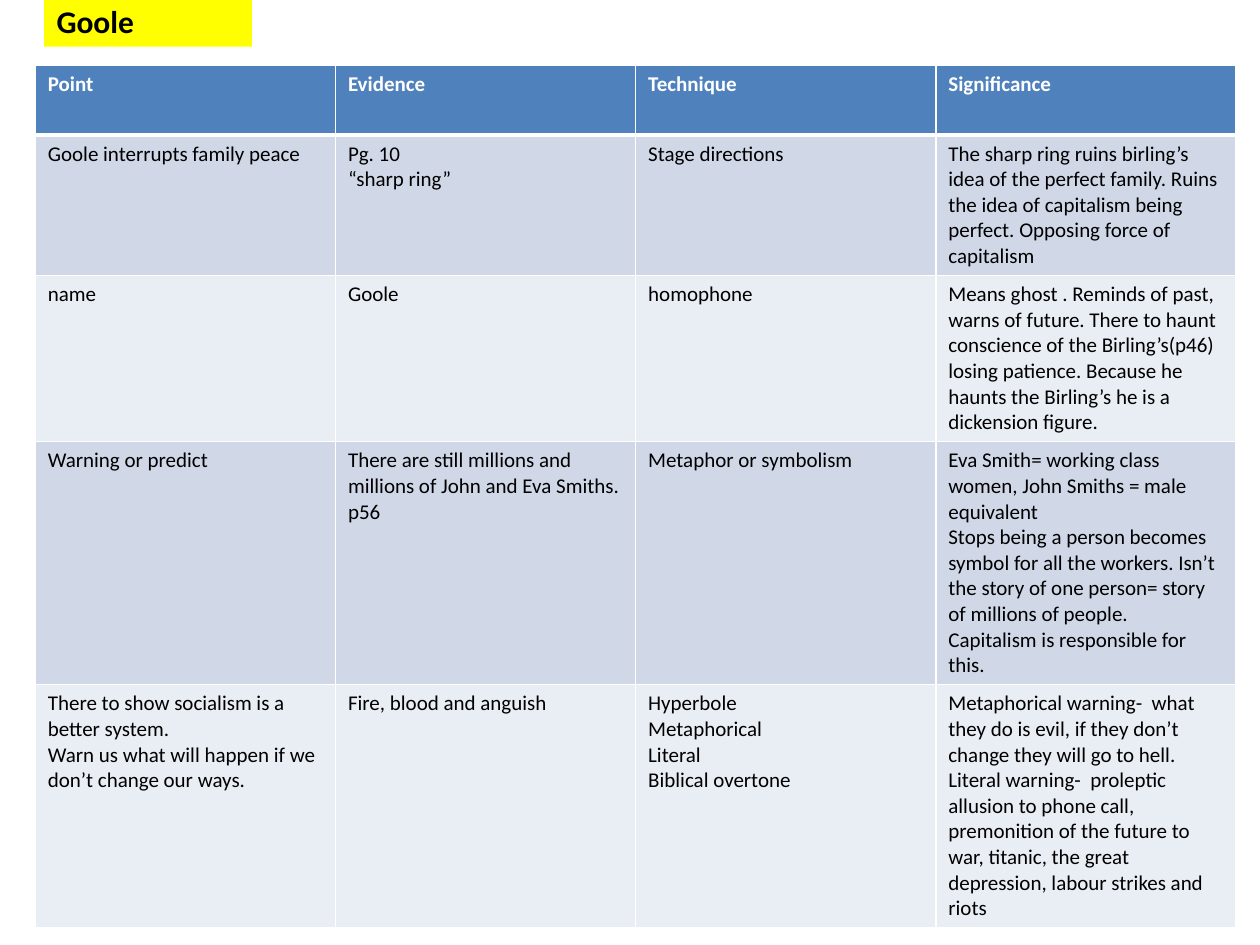
from lxml.etree import SubElement
from pptx import Presentation
from pptx.dml.color import RGBColor
from pptx.enum.text import MSO_AUTO_SIZE
from pptx.oxml.ns import qn
from pptx.util import Inches, Pt

TITLE = "Goole"
HEADINGS = ["Point", "Evidence", "Technique", "Significance"]
# Each cell is a list of paragraphs.
ROWS = [
    [
        ["Goole interrupts family peace"],
        ["Pg. 10", "“sharp ring”"],
        ["Stage directions"],
        ["The sharp ring ruins birling’s idea of the perfect family. Ruins the idea "
         "of capitalism being perfect. Opposing force of capitalism"],
    ],
    [
        ["name"],
        ["Goole"],
        ["homophone"],
        ["Means ghost . Reminds of past, warns of future. There to haunt conscience of "
         "the Birling’s(p46) losing patience. Because he haunts the Birling’s he is a "
         "dickension figure."],
    ],
    [
        ["Warning or predict"],
        ["There are still millions and millions of John and Eva Smiths. p56"],
        ["Metaphor or symbolism"],
        ["Eva Smith= working class women, John Smiths = male equivalent",
         "Stops being a person becomes symbol for all the workers. Isn’t the story of "
         "one person= story of millions of people.",
         "Capitalism is responsible for this."],
    ],
    [
        ["There to show socialism is a better system.",
         "Warn us what will happen if we don’t change our ways."],
        ["Fire, blood and anguish"],
        ["Hyperbole", "Metaphorical", "Literal", "Biblical overtone"],
        ["Metaphorical warning-  what they do is evil, if they don’t change they will "
         "go to hell.",
         "Literal warning-  proleptic allusion to phone call, premonition of the future "
         "to war, titanic, the great depression, labour strikes and riots"],
    ],
]

COLOURS = {
    "title": "FFFF00",
    "header": "4F81BD",
    "odd": "D0D8E8",
    "even": "E9EDF4",
    "text": "000000",
    "white": "FFFFFF",
}
FONT = "Calibri"
TABLE_LEFT, TABLE_TOP, TABLE_WIDTH = 0.28, 0.52, 9.53
HEADER_HEIGHT, ROW_HEIGHT = 0.55, 0.94


def colour(name):
    return RGBColor.from_string(COLOURS[name])


def write(frame, lines, size, text_colour, bold):
    frame.text = "\n".join(lines)
    for para in frame.paragraphs:
        para.font.name = FONT
        para.font.size = Pt(size)
        para.font.bold = bold
        para.font.color.rgb = colour(text_colour)


def add_borders(cell, bottom_width):
    """Draw white cell borders, which must come before the fill in the XML."""
    properties = cell._tc.get_or_add_tcPr()
    widths = {"lnL": 1, "lnR": 1, "lnT": 1, "lnB": bottom_width}
    for side, width in widths.items():
        line = SubElement(properties, qn(f"a:{side}"), w=str(Pt(width)))
        fill = SubElement(line, qn("a:solidFill"))
        SubElement(fill, qn("a:srgbClr"), val=COLOURS["white"])


def add_title(page):
    box = page.shapes.add_textbox(Inches(0.35), Inches(-0.03), Inches(1.65), Inches(0.4))
    box.fill.solid()
    box.fill.fore_color.rgb = colour("title")
    box.text_frame.word_wrap = True
    box.text_frame.auto_size = MSO_AUTO_SIZE.SHAPE_TO_FIT_TEXT
    write(box.text_frame, [TITLE], 18, "text", True)


def add_notes_table(page):
    content = [[[heading] for heading in HEADINGS]] + ROWS
    height = HEADER_HEIGHT + ROW_HEIGHT * len(ROWS)
    table = page.shapes.add_table(
        len(content), len(HEADINGS),
        Inches(TABLE_LEFT), Inches(TABLE_TOP), Inches(TABLE_WIDTH), Inches(height),
    ).table
    for row_index, cells in enumerate(content):
        header = row_index == 0
        band = "header" if header else "odd" if row_index % 2 else "even"
        table.rows[row_index].height = Inches(HEADER_HEIGHT if header else ROW_HEIGHT)
        for column_index, lines in enumerate(cells):
            cell = table.cell(row_index, column_index)
            add_borders(cell, 3 if header else 1)
            cell.fill.solid()
            cell.fill.fore_color.rgb = colour(band)
            write(cell.text_frame, lines, 12, "white" if header else "text", header)


def main():
    deck = Presentation()
    deck.slide_width, deck.slide_height = Inches(10), Inches(7.5)
    page = deck.slides.add_slide(deck.slide_layouts[6])
    add_notes_table(page)
    add_title(page)
    deck.save("out.pptx")


if __name__ == "__main__":
    main()
